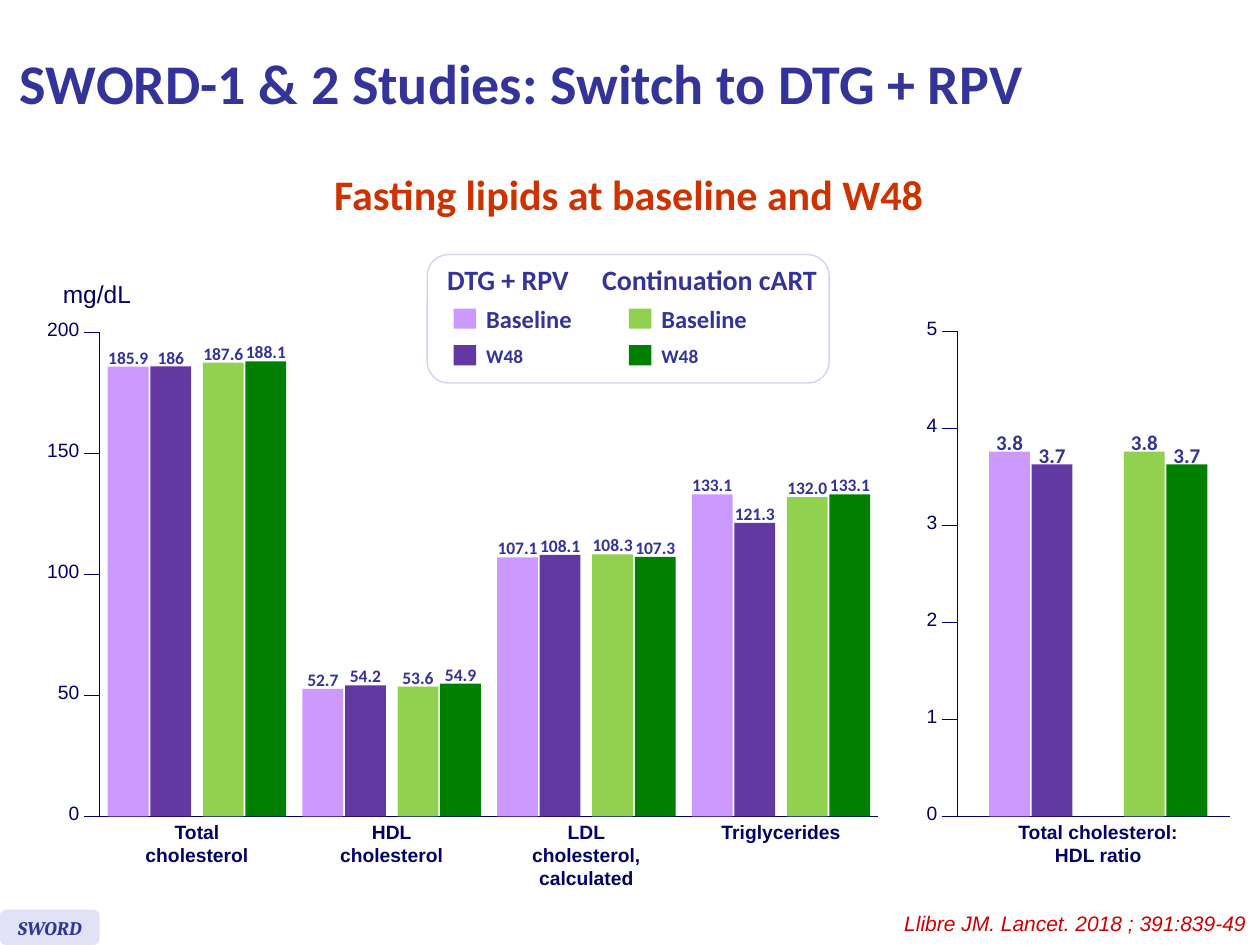
from pptx import Presentation
from pptx.util import Inches, Pt
from pptx.dml.color import RGBColor
from pptx.enum.shapes import MSO_SHAPE as SHAPE, MSO_CONNECTOR as CONN
from pptx.enum.text import PP_ALIGN as ALIGN, MSO_ANCHOR as ANCHOR
from lxml.etree import SubElement
from pptx.oxml.ns import qn

# The slide is a grid of 100 columns by 75 rows; all lengths are in grid units
COLS, ROWS = 100, 75
NAVY, INDIGO, RED, RUST = "000066", "333399", "CC0000", "CC3300"
ARMS = [("DTG + RPV", ("CC99FF", "6338A2")),
        ("Continuation cART", ("92D050", "008000"))]
BAR_COLOURS = [c for _, pair in ARMS for c in pair]
BAR_W, BAR_STEP = 3.24, 3.38

prs = Presentation()
prs.slide_width, prs.slide_height = Inches(10), Inches(7.5)
slide = prs.slides.add_slide(prs.slide_layouts[6])


def gx(cols):
    return int(prs.slide_width * cols / COLS)


def gy(rows):
    return int(prs.slide_height * rows / ROWS)


def place(box):
    x, y, w, h = box
    return gx(x), gy(y), gx(w), gy(h)


def rgb(value):
    return RGBColor.from_string(value)


def write(sp, text, size, colour, font="Calibri", align=ALIGN.LEFT,
          bold=True, italic=False, wrap=False):
    tf = sp.text_frame
    tf.word_wrap = wrap
    tf.vertical_anchor = ANCHOR.MIDDLE
    p = tf.paragraphs[0]
    p.text = text
    p.alignment = align
    for r in p.runs:
        r.font.size, r.font.name = Pt(size), font
        r.font.bold, r.font.italic = bold, italic
        r.font.color.rgb = rgb(colour)


def add_text(box, text, size, colour, inset=True, **style):
    sp = slide.shapes.add_textbox(*place(box))
    write(sp, text, size, colour, **style)
    if not inset:
        tf = sp.text_frame
        tf.margin_left = tf.margin_right = tf.margin_top = tf.margin_bottom = 0
    return sp


def add_block(box, fill, kind=SHAPE.RECTANGLE, line=None):
    sp = slide.shapes.add_shape(kind, *place(box))
    sp.shadow.inherit = False
    sp.fill.solid()
    sp.fill.fore_color.rgb = rgb(fill)
    if line:
        sp.line.color.rgb = rgb(line)
        sp.line.width = Pt(0.75)
    else:
        sp.line.fill.background()
    return sp


def add_axes(box, top, step):
    x, y, w, h = box
    # L-shaped axis line
    fb = slide.shapes.build_freeform(gx(x + w), gy(y + h))
    fb.add_line_segments([(gx(x), gy(y + h)), (gx(x), gy(y))], close=False)
    axis = fb.convert_to_shape()
    axis.shadow.inherit = False
    axis.fill.background()
    axis.line.color.rgb = rgb(NAVY)
    axis.line.width = Pt(1)
    # Ticks and their values
    for value in range(0, top + 1, step):
        ty = y + h * (1 - value / top)
        tick = slide.shapes.add_connector(
            CONN.STRAIGHT, gx(x - 1.2), gy(ty), gx(x), gy(ty))
        tick.line.color.rgb = rgb(NAVY)
        tick.line.width = Pt(1)
        SubElement(tick._element.spPr, qn("a:effectLst"))
        add_text((x - 4.2, ty - 1.25, 2.6, 1.9), str(value), 11, NAVY,
                 inset=False, font="Arial", align=ALIGN.RIGHT, bold=False)


def bar_chart(box, top, step, groups, margin, arm_step, label_size):
    """Each group is a name and four (value, label) pairs, two for each arm."""
    x, y, w, h = box
    add_axes(box, top, step)
    cluster_w = arm_step + BAR_STEP + BAR_W
    for g, (name, bars) in enumerate(groups):
        left = x + g * w / len(groups) + margin
        for i, (value, label) in enumerate(bars):
            bx = left + i // 2 * arm_step + i % 2 * BAR_STEP
            bar_h = h * value / top
            by = y + h - bar_h
            add_block((bx, by, BAR_W, bar_h), BAR_COLOURS[i])
            add_text((bx, by - 1.6, BAR_W, 1.7), label, label_size, INDIGO,
                     inset=False, align=ALIGN.CENTER)
        lines = name.count("\n") + 1
        add_text((left, y + h + 0.3, cluster_w, 1.85 * lines), name, 11, NAVY,
                 inset=False, font="Arial", align=ALIGN.CENTER)


def legend(box):
    x, y, w, h = box
    add_block(box, "FFFFFF", SHAPE.ROUNDED_RECTANGLE, "D0D0F0")
    # Left edge and width of each arm's heading
    heading_spans = [(0.6, 11.8), (12.9, 19.6)]
    for i, (arm, colours) in enumerate(ARMS):
        dx, heading_w = heading_spans[i]
        add_text((x + dx, y + 0.1, heading_w, 3.7), arm, 16, INDIGO)
        key_x = x + 2.1 + 13.9 * i
        entries = zip(("Baseline", "W48"), (14, 11), colours)
        for row, (text, size, colour) in enumerate(entries):
            key_y = y + 4.3 + 2.9 * row
            add_block((key_x, key_y, 1.8, 1.6), colour)
            add_text((key_x + 1.6, key_y - 0.8, 8.9, 3.2), text, size, INDIGO)


def headings():
    add_text((0.6, 0.5, 89.6, 12.1), "SWORD-1 & 2 Studies: Switch to DTG + RPV",
             32, INDIGO, wrap=True)
    add_text((21, 12.3, 57.8, 6.1), "Fasting lipids at baseline and W48",
             24, RUST, align=ALIGN.CENTER, wrap=True)


def footer(top):
    tag = add_block((0, top, 7.9, 2.8), "E2E2F6", SHAPE.ROUNDED_RECTANGLE)
    write(tag, "SWORD", 11, INDIGO, font="Cambria", align=ALIGN.CENTER,
          italic=True)
    add_text((70.6, top - 0.4, 29.3, 3), "Llibre JM. Lancet. 2018 ; 391:839-49",
             12, RED, font="Arial", align=ALIGN.RIGHT, bold=False, italic=True)


def labelled(*labels):
    return [(float(s), s) for s in labels]


LIPIDS = [
    ("Total\ncholesterol", labelled("185.9", "186", "187.6", "188.1")),
    ("HDL\ncholesterol", labelled("52.7", "54.2", "53.6", "54.9")),
    ("LDL\ncholesterol,\ncalculated",
     labelled("107.1", "108.1", "108.3", "107.3")),
    ("Triglycerides", labelled("133.1", "121.3", "132.0", "133.1")),
]
# Ratio bars are a little shorter than their rounded labels
RATIO = [("Total cholesterol:\nHDL ratio", [(3.76, "3.8"), (3.63, "3.7")] * 2)]

headings()
footer(72.2)
bar_chart((76, 26.3, 21.6, 38.5), 5, 1, RATIO, 2.5, 10.7, 12)
legend((33.9, 20.2, 31.9, 10.2))
bar_chart((7.9, 26.4, 61.8, 38.4), 200, 50, LIPIDS, 0.65, 7.55, 10)
add_text((4, 21.6, 7.5, 3.4), "mg/dL", 14, NAVY, font="Arial", bold=False)

prs.save("out.pptx")
